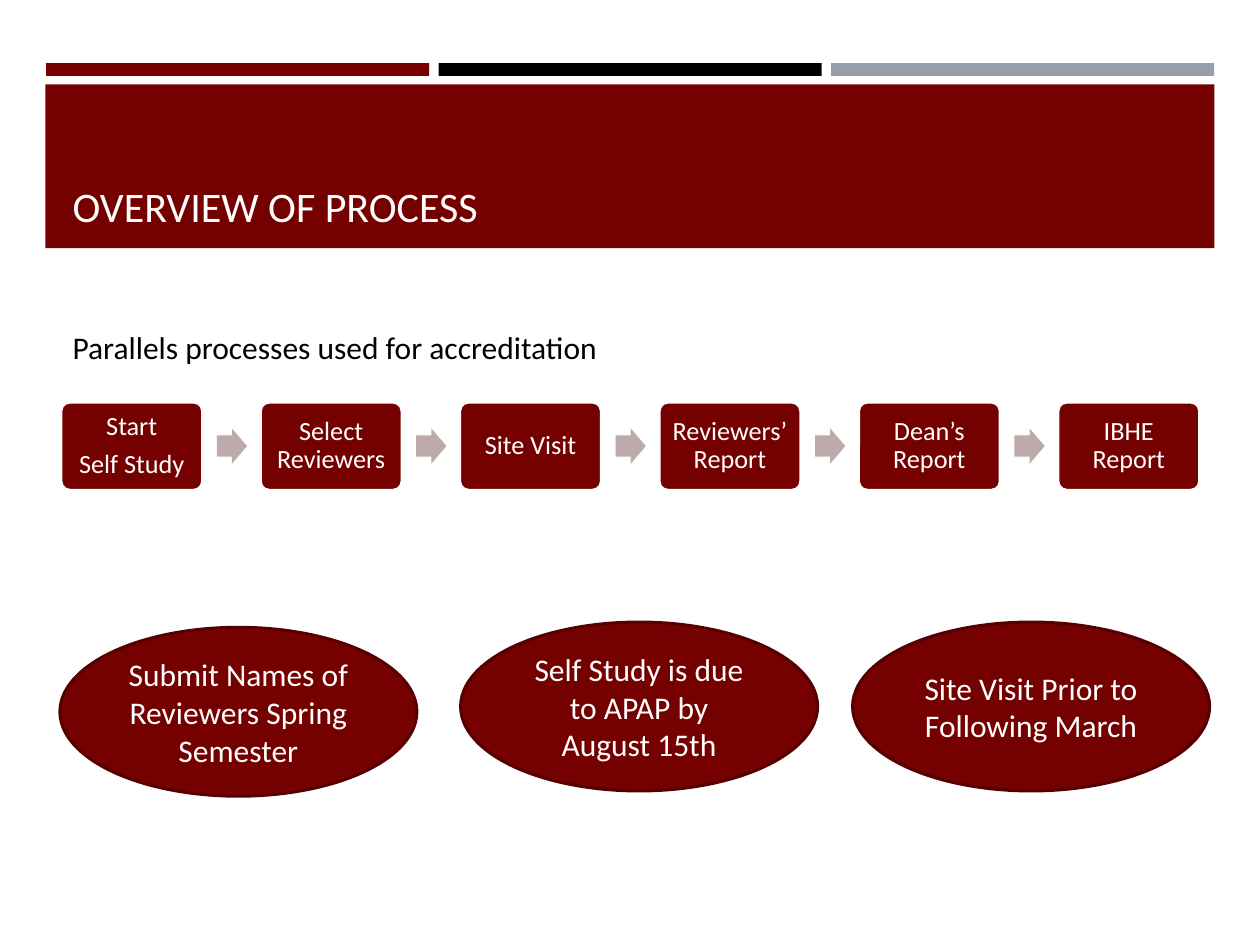
from dataclasses import dataclass
from typing import Optional

from pptx import Presentation
from pptx.dml.color import RGBColor
from pptx.enum.shapes import MSO_SHAPE
from pptx.enum.text import MSO_ANCHOR, PP_ALIGN
from pptx.shapes.autoshape import Shape
from pptx.slide import Slide
from pptx.text.text import TextFrame
from pptx.util import Pt

RECTANGLE = MSO_SHAPE.RECTANGLE
ROUNDED = MSO_SHAPE.ROUNDED_RECTANGLE
ARROW = MSO_SHAPE.RIGHT_ARROW
OVAL = MSO_SHAPE.OVAL
MIDDLE, BOTTOM, TOP = MSO_ANCHOR.MIDDLE, MSO_ANCHOR.BOTTOM, MSO_ANCHOR.TOP
LEFT, CENTER = PP_ALIGN.LEFT, PP_ALIGN.CENTER


@dataclass(frozen=True)
class Theme:
    font: str = "Calibri"
    maroon: str = "750000"
    dark_maroon: str = "570000"
    black: str = "000000"
    gray: str = "969FA7"
    arrow: str = "BDABAB"
    white: str = "FFFFFF"
    title_size: float = 24
    body_size: float = 18
    step_size: float = 15
    outline: float = 1.75


@dataclass(frozen=True)
class Box:
    left: float
    top: float
    width: float
    height: float


@dataclass(frozen=True)
class Milestone:
    text: str
    left: float
    top: float


THEME = Theme()
STRIPES = (THEME.maroon, THEME.black, THEME.gray)
STRIPE_PITCH = 224.3
STEPS = (
    ("Start", "Self Study"),
    ("Select Reviewers",),
    ("Site Visit",),
    ("Reviewers’ Report",),
    ("Dean’s Report",),
    ("IBHE Report",),
)
STEP_PITCH = 113.95
MILESTONES = (
    Milestone("Submit Names of Reviewers Spring Semester", 34.2, 358.5),
    Milestone("Self Study is due to APAP by August 15th", 263.2, 355.5),
    Milestone("Site Visit Prior to Following March", 487.2, 355.5),
)


def add_block(slide: Slide, kind: int, box: Box, fill: str,
              outline: Optional[str] = None) -> Shape:
    block = slide.shapes.add_shape(
        kind, Pt(box.left), Pt(box.top), Pt(box.width), Pt(box.height))
    block.shadow.inherit = False
    block.fill.solid()
    block.fill.fore_color.rgb = RGBColor.from_string(fill)
    if outline:
        block.line.color.rgb = RGBColor.from_string(outline)
        block.line.width = Pt(THEME.outline)
    else:
        block.line.fill.background()
    return block


def write(frame: TextFrame, lines: tuple[str, ...], size: float, color: str,
          align: int, anchor: int) -> None:
    frame.word_wrap = True
    frame.vertical_anchor = anchor
    frame.text = "\n".join(lines)
    for paragraph in frame.paragraphs:
        paragraph.alignment = align
        paragraph.font.name = THEME.font
        paragraph.font.size = Pt(size)
        paragraph.font.color.rgb = RGBColor.from_string(color)


def add_label(slide: Slide, box: Box, text: str, size: float, color: str,
              anchor: int) -> None:
    label = slide.shapes.add_textbox(
        Pt(box.left), Pt(box.top), Pt(box.width), Pt(box.height))
    write(label.text_frame, (text,), size, color, LEFT, anchor)


def add_header(slide: Slide) -> None:
    for index, color in enumerate(STRIPES):
        stripe = Box(26.4 + index * STRIPE_PITCH, 36, 218.9, 7.4)
        add_block(slide, RECTANGLE, stripe, color)
    add_block(slide, RECTANGLE, Box(26, 48.3, 668, 93.5), THEME.maroon)
    add_label(slide, Box(34.4, 55.4, 651.6, 80), "OVERVIEW OF PROCESS",
              THEME.title_size, THEME.white, BOTTOM)


def add_step(slide: Slide, lines: tuple[str, ...], left: float) -> None:
    step = add_block(slide, ROUNDED, Box(left, 229.8, 81, 50.4),
                     THEME.maroon, THEME.white)
    step.adjustments[0] = 0.1
    frame = step.text_frame
    frame.margin_left = frame.margin_right = Pt(4.5)
    frame.margin_top = frame.margin_bottom = Pt(4.5)
    write(frame, lines, THEME.step_size, THEME.white, CENTER, MIDDLE)
    for paragraph in frame.paragraphs:
        paragraph.line_spacing = 0.9
        paragraph.space_after = Pt(0.35 * THEME.step_size)


def add_process(slide: Slide) -> None:
    for index, lines in enumerate(STEPS):
        left = 34.8 + index * STEP_PITCH
        add_step(slide, lines, left)
        if index < len(STEPS) - 1:
            arrow = add_block(slide, ARROW, Box(left + 89.1, 244.8, 17.3, 20.2),
                              THEME.arrow)
            arrow.adjustments[0] = 0.6
            arrow.adjustments[1] = 0.5


def add_milestone(slide: Slide, milestone: Milestone) -> None:
    oval = add_block(slide, OVAL, Box(milestone.left, milestone.top, 204, 96.5),
                     THEME.maroon, THEME.dark_maroon)
    write(oval.text_frame, (milestone.text,), THEME.body_size, THEME.white,
          CENTER, MIDDLE)


def main() -> None:
    presentation = Presentation()
    presentation.slide_width = Pt(720)
    presentation.slide_height = Pt(540)
    slide = presentation.slides.add_slide(presentation.slide_layouts[6])
    add_header(slide)
    add_label(slide, Box(34.4, 183.9, 346, 29),
              "Parallels processes used for accreditation",
              THEME.body_size, THEME.black, TOP)
    add_process(slide)
    for milestone in MILESTONES:
        add_milestone(slide, milestone)
    presentation.save("out.pptx")


if __name__ == "__main__":
    main()
